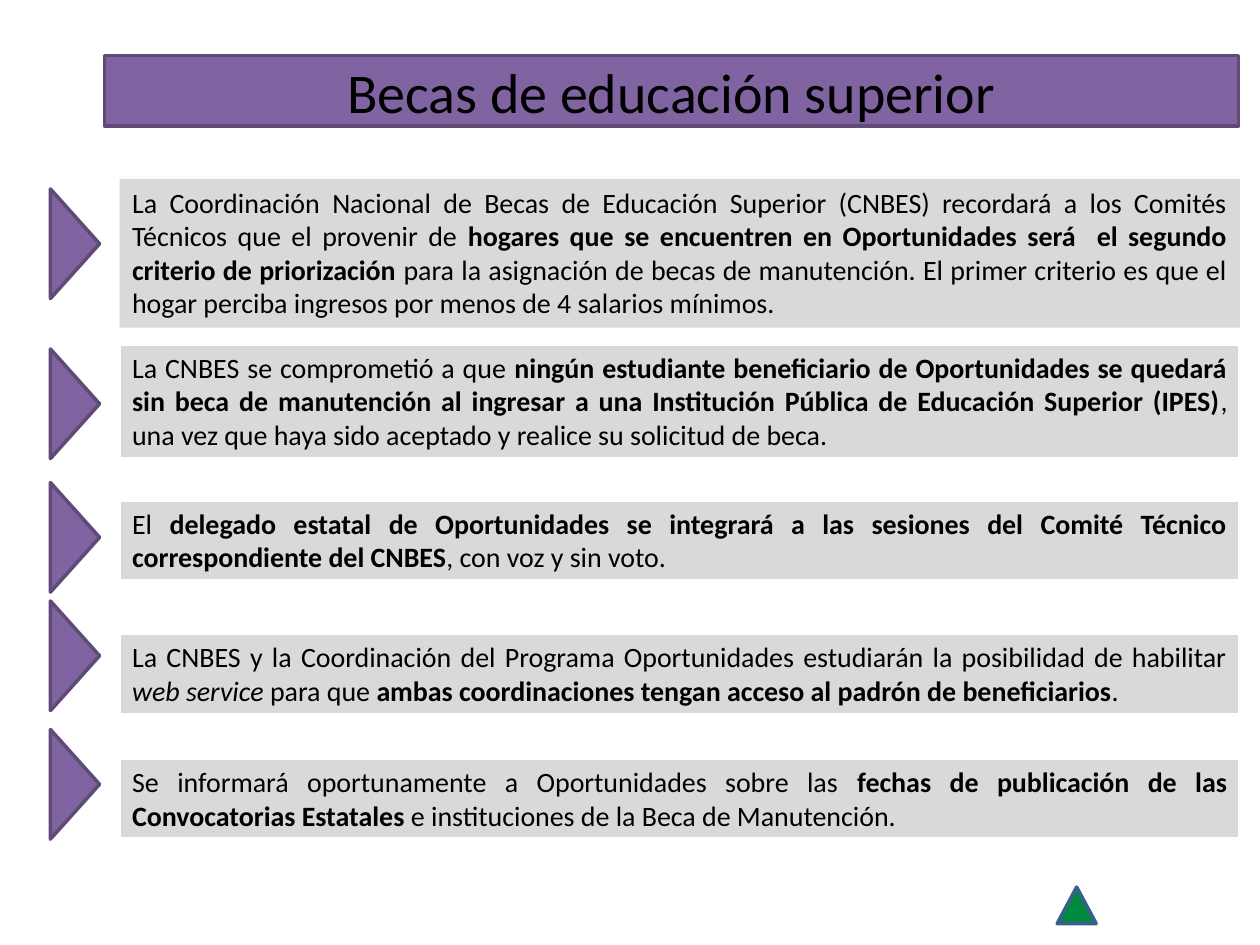
from dataclasses import dataclass

from pptx import Presentation
from pptx.dml.color import RGBColor
from pptx.enum.shapes import MSO_SHAPE
from pptx.enum.text import MSO_ANCHOR, MSO_AUTO_SIZE, PP_ALIGN
from pptx.shapes.autoshape import Shape
from pptx.slide import Slide
from pptx.util import Inches, Pt

RECTANGLE = MSO_SHAPE.RECTANGLE
TRIANGLE = MSO_SHAPE.ISOSCELES_TRIANGLE
MIDDLE, TOP = MSO_ANCHOR.MIDDLE, MSO_ANCHOR.TOP
CENTER, JUSTIFY = PP_ALIGN.CENTER, PP_ALIGN.JUSTIFY
FIT_TEXT = MSO_AUTO_SIZE.SHAPE_TO_FIT_TEXT

FONT = "Calibri"
COLORS = {
    "purple": "8064A2",
    "purple_edge": "5F4A78",
    "green": "008A3E",
    "blue_edge": "3A5F8C",
    "panel": "D9D9D9",
    "white": "FFFFFF",
    "text": "000000",
}


@dataclass(frozen=True)
class Box:
    left: float
    top: float
    width: float
    height: float


@dataclass(frozen=True)
class Fragment:
    text: str
    bold: bool = False
    italic: bool = False


@dataclass(frozen=True)
class Agreement:
    marker_top: float
    panel_top: float
    panel_height: float
    fragments: tuple[Fragment, ...]
    edge: str | None = "white"


AGREEMENTS = (
    Agreement(1.74, 1.42, 1.18, (
        Fragment("La Coordinación Nacional de Becas de Educación Superior (CNBES) "
                 "recordará a los Comités Técnicos que el provenir de "),
        Fragment("hogares que se encuentren en Oportunidades será  el segundo "
                 "criterio de priorización", bold=True),
        Fragment(" para la asignación de becas de manutención. El primer criterio "
                 "es que el hogar perciba ingresos por menos de 4 salarios mínimos."),
    ), edge=None),
    Agreement(3.01, 2.73, 0.91, (
        Fragment("La CNBES se comprometió a que "),
        Fragment("ningún estudiante beneficiario de Oportunidades se quedará sin "
                 "beca de manutención al ingresar a una Institución Pública de "
                 "Educación Superior (IPES)", bold=True),
        Fragment(", una vez que haya sido aceptado y realice su solicitud de beca."),
    )),
    Agreement(4.07, 3.97, 0.64, (
        Fragment("El "),
        Fragment("delegado estatal de Oportunidades se integrará a las sesiones del "
                 "Comité Técnico correspondiente del CNBES", bold=True),
        Fragment(", con voz y sin voto."),
    )),
    Agreement(5.01, 5.03, 0.64, (
        Fragment("La CNBES y la Coordinación del Programa Oportunidades estudiarán "
                 "la posibilidad de habilitar "),
        Fragment("web service ", italic=True),
        Fragment("para que "),
        Fragment("ambas coordinaciones tengan acceso al padrón de beneficiarios",
                 bold=True),
        Fragment("."),
    )),
    Agreement(6.03, 6.02, 0.64, (
        Fragment("Se informará oportunamente a Oportunidades sobre las "),
        Fragment("fechas de publicación de las Convocatorias Estatales", bold=True),
        Fragment(" e instituciones de la Beca de Manutención."),
    )),
)


def add_figure(slide: Slide, kind: MSO_SHAPE, box: Box, fill: str,
               edge: str | None) -> Shape:
    shape = slide.shapes.add_shape(kind, Inches(box.left), Inches(box.top),
                                   Inches(box.width), Inches(box.height))
    shape.shadow.inherit = False
    shape.fill.solid()
    shape.fill.fore_color.rgb = RGBColor.from_string(COLORS[fill])
    if edge:
        shape.line.color.rgb = RGBColor.from_string(COLORS[edge])
        shape.line.width = Pt(2)
    else:
        shape.line.fill.background()
    return shape


def write_text(shape: Shape, fragments: tuple[Fragment, ...], size: int,
               alignment: PP_ALIGN, anchor: MSO_ANCHOR) -> None:
    frame = shape.text_frame
    frame.word_wrap = True
    frame.vertical_anchor = anchor
    paragraph = frame.paragraphs[0]
    paragraph.alignment = alignment
    paragraph.font.name = FONT
    paragraph.font.size = Pt(size)
    for fragment in fragments:
        run = paragraph.add_run()
        run.text = fragment.text
        # Run settings override the default style of the shape
        run.font.color.rgb = RGBColor.from_string(COLORS["text"])
        run.font.name = FONT
        run.font.size = Pt(size)
        run.font.bold = fragment.bold
        run.font.italic = fragment.italic


def add_agreement(slide: Slide, agreement: Agreement) -> None:
    marker = add_figure(slide, TRIANGLE, Box(0.16, agreement.marker_top, 0.87, 0.39),
                        "purple", "purple_edge")
    marker.rotation = 90
    panel = add_figure(slide, RECTANGLE,
                       Box(0.95, agreement.panel_top, 8.89, agreement.panel_height),
                       "panel", agreement.edge)
    write_text(panel, agreement.fragments, 16, JUSTIFY, TOP)
    panel.text_frame.auto_size = FIT_TEXT


def main() -> None:
    presentation = Presentation()
    presentation.slide_width = Inches(10)
    presentation.slide_height = Inches(7.5)
    slide = presentation.slides.add_slide(presentation.slide_layouts[6])

    # Title bar
    title = add_figure(slide, RECTANGLE, Box(0.83, 0.44, 9, 0.56),
                       "purple", "purple_edge")
    write_text(title, (Fragment("Becas de educación superior"),), 32, CENTER, MIDDLE)

    # Green triangle at the foot
    add_figure(slide, TRIANGLE, Box(8.39, 7.04, 0.31, 0.29), "green", "blue_edge")

    # Agreements, each with its marker
    for agreement in AGREEMENTS:
        add_agreement(slide, agreement)

    presentation.save("out.pptx")


if __name__ == "__main__":
    main()
